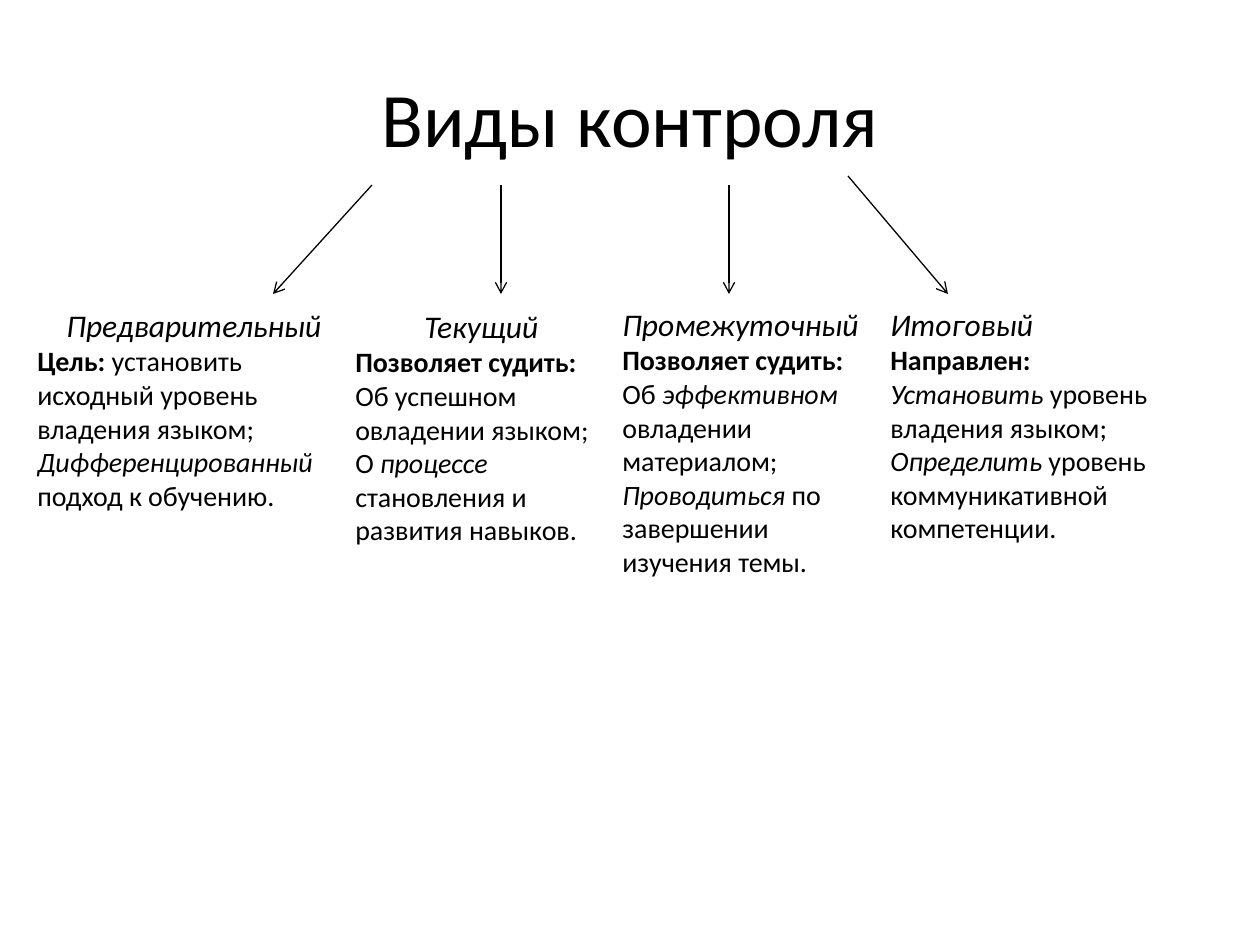
from lxml.etree import SubElement
from pptx import Presentation
from pptx.dml.color import RGBColor
from pptx.enum.shapes import MSO_CONNECTOR
from pptx.enum.text import MSO_ANCHOR, MSO_AUTO_SIZE, PP_ALIGN
from pptx.oxml.ns import qn
from pptx.util import Emu, Pt

PX = 914400 / 126
COLORS = {"ink": "000000", "paper": "FFFFFF"}
PLAIN, BOLD, ITALIC = {}, {"bold": True}, {"italic": True}
LEFT, CENTER = PP_ALIGN.LEFT, PP_ALIGN.CENTER


def px(*lengths):
    return [Emu(round(length * PX)) for length in lengths]


def color(name):
    return RGBColor.from_string(COLORS[name])


class SlideBuilder:
    font_name = "Calibri"
    title_size, heading_size, body_size = 44, 18, 16
    line_width = 0.75

    def __init__(self, slide):
        self.slide = slide
        slide.background.fill.solid()
        slide.background.fill.fore_color.rgb = color("paper")

    def run(self, paragraph, text, size, style):
        run = paragraph.add_run()
        run.text = text
        values = {"name": self.font_name, "size": Pt(size), "bold": False, "italic": False}
        for name, value in (values | style).items():
            setattr(run.font, name, value)
        run.font.color.rgb = color("ink")

    def title(self, text, box):
        shape = self.slide.shapes.title
        shape.left, shape.top, shape.width, shape.height = px(*box)
        shape.text_frame.vertical_anchor = MSO_ANCHOR.MIDDLE
        paragraph = shape.text_frame.paragraphs[0]
        paragraph.alignment = CENTER
        self.run(paragraph, text, self.title_size, PLAIN)

    def arrow(self, start, end):
        line = self.slide.shapes.add_connector(MSO_CONNECTOR.STRAIGHT, *px(*start, *end))
        line.line.width = Pt(self.line_width)
        line.line.color.rgb = color("ink")
        SubElement(line.line._get_or_add_ln(), qn("a:tailEnd"), type="arrow")
        SubElement(line._element.spPr, qn("a:effectLst"))

    def column(self, box, heading, alignment, paragraphs):
        """Add an italic heading with body paragraphs, each a list of (text, style) runs."""
        frame = self.slide.shapes.add_textbox(*px(*box)).text_frame
        frame.word_wrap = True
        frame.auto_size = MSO_AUTO_SIZE.SHAPE_TO_FIT_TEXT
        first = frame.paragraphs[0]
        first.alignment = alignment
        self.run(first, heading, self.heading_size, ITALIC)
        for runs in paragraphs:
            paragraph = frame.add_paragraph()
            paragraph.alignment = LEFT
            for text, style in runs:
                self.run(paragraph, text, self.body_size, style)


ARROWS = [
    ((372, 185), (273, 294)),
    ((501, 185), (501, 294)),
    ((729, 185), (729, 294)),
    ((848, 176), (948, 294)),
]

COLUMNS = [
    ((25, 300, 338, 221), "Предварительный", CENTER, [
        [("Цель:", BOLD), (" установить исходный уровень владения языком;", PLAIN)],
        [("Дифференцированный", ITALIC), (" подход к обучению.", PLAIN)],
    ]),
    ((343, 301, 277, 292), "Текущий", CENTER, [
        [("Позволяет судить:", BOLD)],
        [("Об успешном овладении языком;", PLAIN)],
        [("О ", PLAIN), ("процессе", ITALIC), (" становления и развития навыков.", PLAIN)],
    ]),
    ((610, 299, 268, 289), "Промежуточный", LEFT, [
        [("Позволяет судить:", BOLD)],
        [("Об ", PLAIN), ("эффективном", ITALIC), (" овладении материалом;", PLAIN)],
        [("Проводиться", ITALIC), (" по", PLAIN)],
        [("завершении изучения темы.", PLAIN)],
    ]),
    ((878, 299, 382, 255), "Итоговый", LEFT, [
        [("Направлен:", BOLD)],
        [("Установить", ITALIC), (" уровень владения языком;", PLAIN)],
        [("Определить", ITALIC), (" уровень коммуникативной компетенции.", PLAIN)],
    ]),
]


def main():
    presentation = Presentation()
    presentation.slide_width, presentation.slide_height = px(1260, 945)
    title_only = presentation.slide_layouts[5]
    builder = SlideBuilder(presentation.slides.add_slide(title_only))
    builder.title("Виды контроля", (63, 38, 1134, 158))
    for start, end in ARROWS:
        builder.arrow(start, end)
    for column in COLUMNS:
        builder.column(*column)
    presentation.save("out.pptx")


if __name__ == "__main__":
    main()
